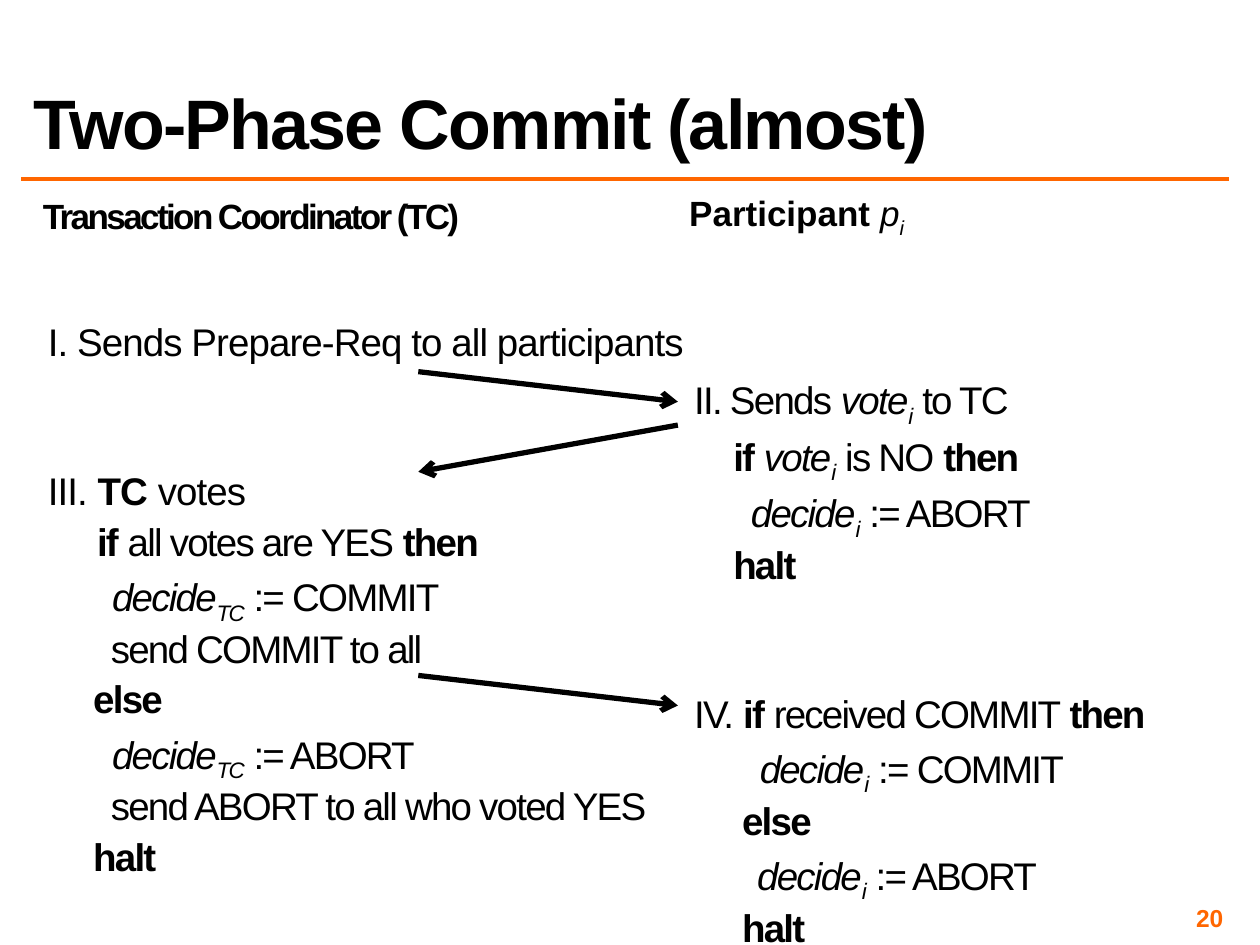
from lxml import etree
from pptx import Presentation
from pptx.dml.color import RGBColor
from pptx.enum.shapes import MSO_CONNECTOR
from pptx.enum.text import MSO_ANCHOR, PP_ALIGN
from pptx.oxml.ns import qn
from pptx.util import Inches, Pt

LINE = MSO_CONNECTOR.STRAIGHT
TOP, MID, LOW = MSO_ANCHOR.TOP, MSO_ANCHOR.MIDDLE, MSO_ANCHOR.BOTTOM
LEFT, RIGHT = PP_ALIGN.LEFT, PP_ALIGN.RIGHT
INK = {"text": "000000", "accent": "FF6600"}
WIDE, HIGH = Inches(10), Inches(7.5)
GAP = 5.2
BLANK = 56

TC_STEPS = [
    (0, 0, -0.5, [("I. Sends Prepare-Req to all participants", "")]),
    (0, BLANK, -0.5, [("III. ", ""), ("TC ", "b"), ("votes", "")]),
    (0.39, 0, -1, [("if", "b"), (" all votes are YES ", ""), ("then", "b")]),
    (0.51, 0, -1, [("decide", "i"), ("TC", "is"), (" := COMMIT", "")]),
    (0.5, 0, -1, [("send COMMIT to all", "")]),
    (0.36, 0, -1, [("else", "b")]),
    (0.51, 0, -1, [("decide", "i"), ("TC", "is"), (" := ABORT", "")]),
    (0.5, 0, -1, [("send ABORT to all who voted YES", "")]),
    (0.36, 0, -1, [("halt", "b")]),
]
PART_STEPS = [
    (0, 0, -1, [("II. Sends ", ""), ("vote", "i"), ("i", "is"), (" to TC", "")]),
    (0.31, 0, -1, [("if ", "b"), ("vote", "i"), ("i", "is"),
                   (" is NO ", ""), ("then", "b")]),
    (0.45, 0, -1, [("decide", "i"), ("i", "is"), (" := ABORT", "")]),
    (0.31, 0, -1, [("halt", "b")]),
    (0, BLANK, -1, [("IV. ", ""), ("if", "b"), (" received COMMIT ", ""),
                    ("then", "b")]),
    (0.52, 0, -1, [("decide", "i"), ("i", "is"), (" := COMMIT", "")]),
    (0.38, 0, -1, [("else", "b")]),
    (0.5, 0, -1, [("decide", "i"), ("i", "is"), (" := ABORT", "")]),
    (0.38, 0, -1, [("halt", "b")]),
]


def area(x, y, w, h):
    return (int(WIDE * x / 100), int(HIGH * y / 100),
            int(WIDE * w / 100), int(HIGH * h / 100))


def write(slide, box, lines, size=22, ink="text", anchor=TOP, align=LEFT,
          pad=(0, 0), lead=1.0, gap=0):
    frame = slide.shapes.add_textbox(*box).text_frame
    frame.word_wrap = True
    frame.vertical_anchor = anchor
    frame.margin_left = frame.margin_right = Inches(pad[0])
    frame.margin_top = frame.margin_bottom = Inches(pad[1])
    for n, (inset, extra, track, runs) in enumerate(lines):
        para = frame.add_paragraph() if n else frame.paragraphs[0]
        para.alignment = align
        para.line_spacing = lead
        para.space_before = Pt(gap + extra)
        if inset:
            para._p.get_or_add_pPr().set("marL", str(Inches(inset)))
        for text, style in runs:
            run = para.add_run()
            run.text = text
            font = run.font
            font.name, font.size = "Arial", Pt(size)
            font.bold, font.italic = "b" in style, "i" in style
            font.color.rgb = RGBColor.from_string(INK[ink])
            props = run._r.get_or_add_rPr()
            props.set("spc", str(int(track * 100)))
            if "s" in style:
                props.set("baseline", "-25000")


def stroke(slide, start, end, ink="text", width=3, tip=False):
    line = slide.shapes.add_connector(LINE, *start, *end)
    line.line.color.rgb = RGBColor.from_string(INK[ink])
    line.line.width = Pt(width)
    if tip:
        etree.SubElement(line.line._get_or_add_ln(), qn("a:tailEnd"),
                         type="arrow")
    etree.SubElement(line._element.spPr, qn("a:effectLst"))


def banner(slide, box, title):
    x, y, w, h = box
    write(slide, (x, y, w, int(h * 0.94)), [(0, 0, -1, [(title, "b")])],
          size=40, anchor=LOW, pad=(0.1, 0.05), lead=0.8)
    stroke(slide, (x, y + h), (x + w, y + h), ink="accent", width=2)


def column(slide, box, title, steps, drop):
    x, y, w, h = box
    skip = int(h * drop)
    write(slide, (x, y, w, int(h * 0.057)), [title], size=20, anchor=MID)
    write(slide, (x, y + skip, w, h - skip), steps,
          pad=(0.04, 0.04), lead=0.9, gap=GAP)


def signals(slide, box):
    x, y, w, h = box
    for back, start, end in [(False, 0, 0.09), (True, 0.16, 0.3),
                             (False, 0.91, 1)]:
        near, far = (x + w, x) if back else (x, x + w)
        stroke(slide, (near, y + int(h * start)), (far, y + int(h * end)),
               tip=True)


def footer(slide, box, number):
    write(slide, box, [(0, 0, 0, [(number, "b")])], size=14, ink="accent",
          anchor=MID, align=RIGHT, pad=(0.04, 0.04))


def main():
    deck = Presentation()
    deck.slide_width, deck.slide_height = WIDE, HIGH
    slide = deck.slides.add_slide(deck.slide_layouts[6])
    banner(slide, area(1.7, 2.27, 95.8, 16.66), "Two-Phase Commit (almost)")
    column(slide, area(3.4, 20.53, 52.7, 79.47),
           (0, 0, -1.5, [("Transaction Coordinator (TC)", "b")]),
           TC_STEPS, 0.166)
    column(slide, area(54.7, 20.53, 45.3, 79.47),
           (0, 0, 0, [("Participant ", "b"), ("p", "i"), ("i", "is")]),
           PART_STEPS, 0.237)
    signals(slide, area(33.2, 39.33, 20.6, 35.33))
    footer(slide, area(74.2, 95.6, 23.3, 3.07), "20")
    deck.save("out.pptx")


if __name__ == "__main__":
    main()
